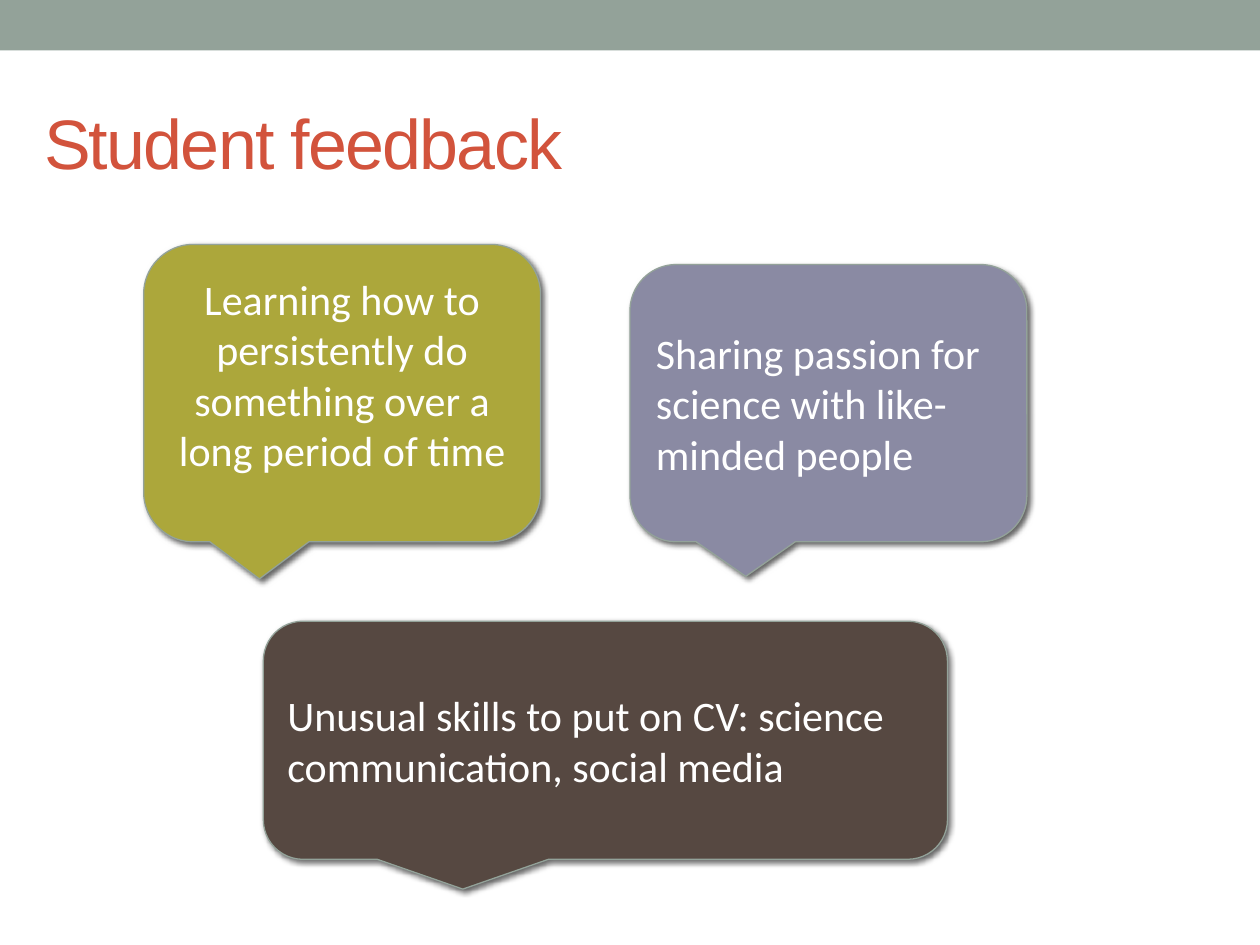
from lxml.etree import SubElement as Sub
from pptx import Presentation
from pptx.dml.color import RGBColor as Rgb
from pptx.enum.shapes import MSO_SHAPE as Kind
from pptx.enum.text import MSO_ANCHOR as Anchor, MSO_AUTO_SIZE as Fit, PP_ALIGN as Align
from pptx.oxml.ns import qn
from pptx.util import Inches as In, Pt

HUES = {
    "sage": "93A299", "red": "D2533C", "olive": "ACA73B", "brown": "564841",
    "mauve": "8A8AA3", "white": "FFFFFF", "black": "000000",
}
WIDE, HIGH = 10, 7.5
QUOTES = [
    ((1.14, 1.94, 3.15, 2.36), "olive", Align.CENTER, 0.35,
     "Learning how to persistently do something over a long period of time"),
    ((2.09, 4.93, 5.43, 1.89), "brown", Align.LEFT, 0.05,
     "Unusual skills to put on CV: science communication, social media"),
    ((5, 2.1, 3.15, 2.2), "mauve", Align.LEFT, 0.05,
     "Sharing passion for science with like-minded people"),
]


def write(shape, text, size=24, font="Calibri", hue="white", align=Align.LEFT, foot=0.05, space=0):
    """Fill a shape with one formatted paragraph."""
    frame = shape.text_frame
    frame.word_wrap = True
    frame.auto_size = Fit.NONE
    frame.vertical_anchor = Anchor.MIDDLE
    frame.margin_bottom = In(foot)
    para = frame.paragraphs[0]
    para.alignment = align
    run = para.add_run()
    run.text = text
    run.font.size = Pt(size)
    run.font.name = font
    run.font.color.rgb = Rgb.from_string(HUES[hue])
    if space:
        run.font._element.set("spc", str(space * 100))


def draw(slide, kind, box, hue):
    """Add a flat filled shape in the given box."""
    shape = slide.shapes.add_shape(kind, *map(In, box))
    shape.shadow.inherit = False
    shape.fill.solid()
    shape.fill.fore_color.rgb = Rgb.from_string(HUES[hue])
    shape.line.fill.background()
    return shape


def shade(shape):
    """Cast a soft shadow to the lower right."""
    glow = shape._element.spPr.find(qn("a:effectLst"))
    outer = Sub(glow, qn("a:outerShdw"), blurRad=str(Pt(3)), dist=str(Pt(2)),
                dir="2700000", algn="br", rotWithShape="0")
    tint = Sub(outer, qn("a:srgbClr"), val=HUES["black"])
    Sub(tint, qn("a:alpha"), val="60000")


def header(slide, box):
    """Place the top band and the slide title."""
    draw(slide, Kind.RECTANGLE, (0, 0, WIDE, 0.4), "sage")
    title = slide.shapes.title
    title.left, title.top, title.width, title.height = map(In, box)
    write(title, "Student feedback", size=40, font="Arial", hue="red", space=-1)


def bubble(slide, box, hue, align, foot, text):
    """Place one quote in a speech bubble."""
    shape = draw(slide, Kind.ROUNDED_RECTANGULAR_CALLOUT, box, hue)
    shape.line.color.rgb = Rgb.from_string(HUES["sage"])
    shape.line.width = Pt(0.75)
    shade(shape)
    write(shape, text, align=align, foot=foot)


def main():
    """Build and save the slide."""
    deck = Presentation()
    deck.slide_width, deck.slide_height = In(WIDE), In(HIGH)
    slide = deck.slides.add_slide(deck.slide_layouts[5])
    header(slide, (0.25, 0.58, 9, 1.08))
    for quote in QUOTES:
        bubble(slide, *quote)
    deck.save("out.pptx")


if __name__ == "__main__":
    main()
